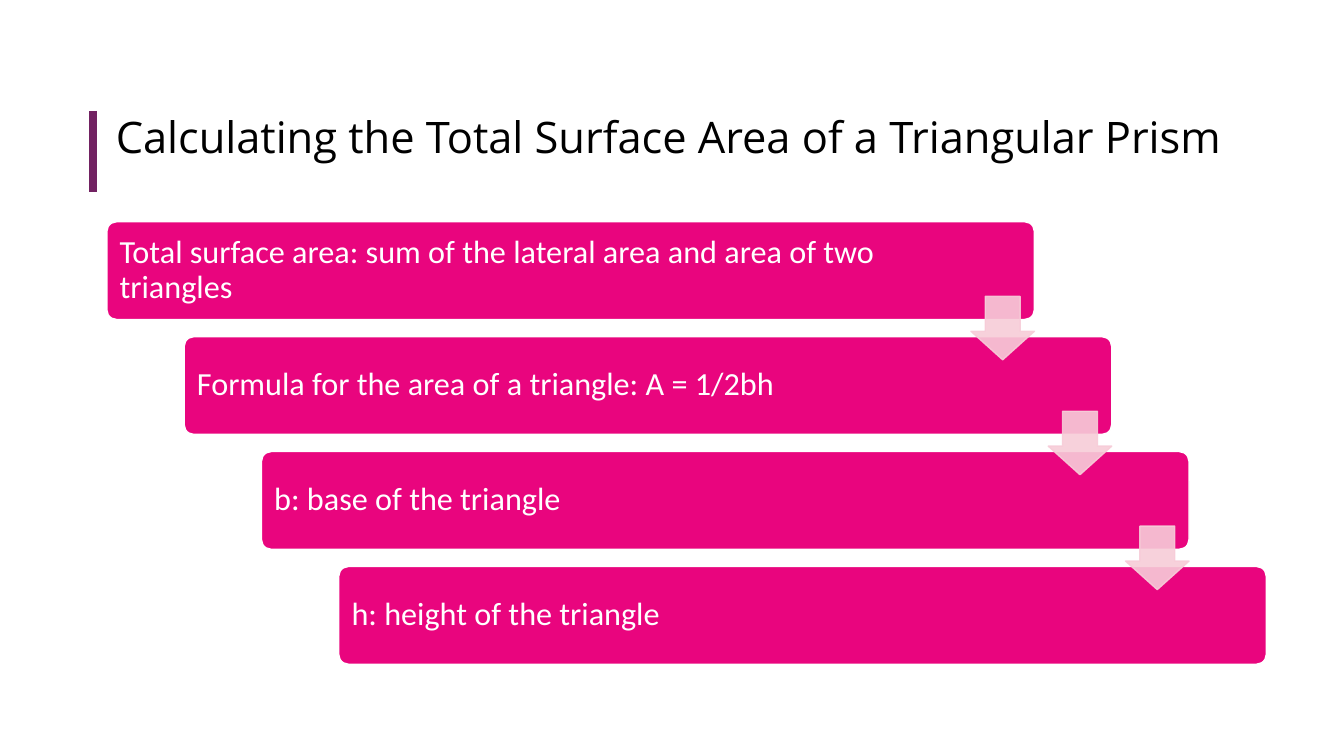
import pptx
import pptx.dml.color
import pptx.enum.shapes
import pptx.enum.text
import pptx.oxml
import pptx.oxml.ns
import pptx.util
import lxml.etree

Inches = pptx.util.Inches
RGBColor = pptx.dml.color.RGBColor
MSO_SHAPE = pptx.enum.shapes.MSO_SHAPE
ANCHOR = pptx.enum.text.MSO_ANCHOR
ALIGN = pptx.enum.text.PP_ALIGN

PURPLE = RGBColor(0x72, 0x22, 0x62)
PINK = RGBColor(0xE9, 0x05, 0x7E)
PALE_PINK = RGBColor(0xF7, 0xCC, 0xD8)
WHITE = RGBColor(0xFF, 0xFF, 0xFF)
BLACK = RGBColor(0, 0, 0)

TITLE = "Calculating the Total Surface Area of a Triangular Prism"
STEPS = [
    "Total surface area: sum of the lateral area and area of two triangles",
    "Formula for the area of a triangle: A = 1/2bh",
    "b: base of the triangle",
    "h: height of the triangle",
]


def set_attributes(target, values):
    for name, value in values.items():
        setattr(target, name, value)


def write_text(shape, text, font, size, color, frame_format):
    set_attributes(shape.text_frame, {"word_wrap": True, **frame_format})
    paragraph = shape.text_frame.paragraphs[0]
    set_attributes(paragraph, {"text": text, "line_spacing": 0.9, "alignment": ALIGN.LEFT})
    set_attributes(paragraph.font, {"name": font, "size": pptx.util.Pt(size)})
    paragraph.font.color.rgb = color


def add_filled_shape(slide, kind, box, fill, line, adjustments):
    shape = slide.shapes.add_shape(kind, *map(Inches, box))
    shape.shadow.inherit = False
    shape.fill.solid()
    shape.fill.fore_color.rgb = fill
    shape.line.color.rgb = line
    shape.line.width = pptx.util.Pt(1)
    for index, value in enumerate(adjustments):
        shape.adjustments[index] = value
    return shape


def set_opacity(shape, percent):
    for color in shape._element.spPr.iter(pptx.oxml.ns.qn("a:srgbClr")):
        alpha = lxml.etree.SubElement(color, pptx.oxml.ns.qn("a:alpha"))
        alpha.set("val", str(percent * 1000))


def add_title(slide, left, top, width, height):
    bar = slide.shapes.add_connector(
        pptx.enum.shapes.MSO_CONNECTOR.STRAIGHT,
        *map(Inches, (left, top, left, top + height)))
    bar.line.color.rgb = PURPLE
    bar.line.width = pptx.util.Pt(6)
    lxml.etree.SubElement(bar._element.spPr, pptx.oxml.ns.qn("a:effectLst"))
    text_offset = 0.13
    title = slide.shapes.add_textbox(
        *map(Inches, (left + text_offset, top, width - text_offset, height)))
    write_text(title, TITLE, "Open Sans", 31, BLACK, {"vertical_anchor": ANCHOR.TOP})


def add_staircase(slide, left, top, width, height):
    step_width, step_height = 9.2, 0.97
    arrow_size, arrow_drop = 0.63, 0.74
    gaps = len(STEPS) - 1
    shift_right = (width - step_width) / gaps
    shift_down = (height - step_height) / gaps
    frame_format = {
        "vertical_anchor": ANCHOR.MIDDLE,
        "margin_left": Inches(0.1),
        "margin_right": Inches(1.15),
        "margin_top": Inches(0.1),
        "margin_bottom": Inches(0.1),
    }
    for index, text in enumerate(STEPS):
        box = (left + index * shift_right, top + index * shift_down, step_width, step_height)
        step = add_filled_shape(slide, MSO_SHAPE.ROUNDED_RECTANGLE, box, PINK, WHITE, [0.1])
        write_text(step, text, "Calibri", 23, WHITE, frame_format)
    for index in range(gaps):
        box = (left + index * shift_right + step_width - arrow_size,
               top + index * shift_down + arrow_drop, arrow_size, arrow_size)
        arrow = add_filled_shape(
            slide, MSO_SHAPE.DOWN_ARROW, box, PALE_PINK, PALE_PINK, [0.55, 0.45])
        set_opacity(arrow, 90)


def main():
    presentation = pptx.Presentation()
    set_attributes(presentation, {"slide_width": Inches(13.33), "slide_height": Inches(7.5)})
    slide = presentation.slides.add_slide(presentation.slide_layouts[6])
    add_title(slide, 0.92, 1.1, 11.63, 0.8)
    add_staircase(slide, 1.06, 2.2, 11.5, 4.39)
    presentation.save("out.pptx")


if __name__ == "__main__":
    main()
